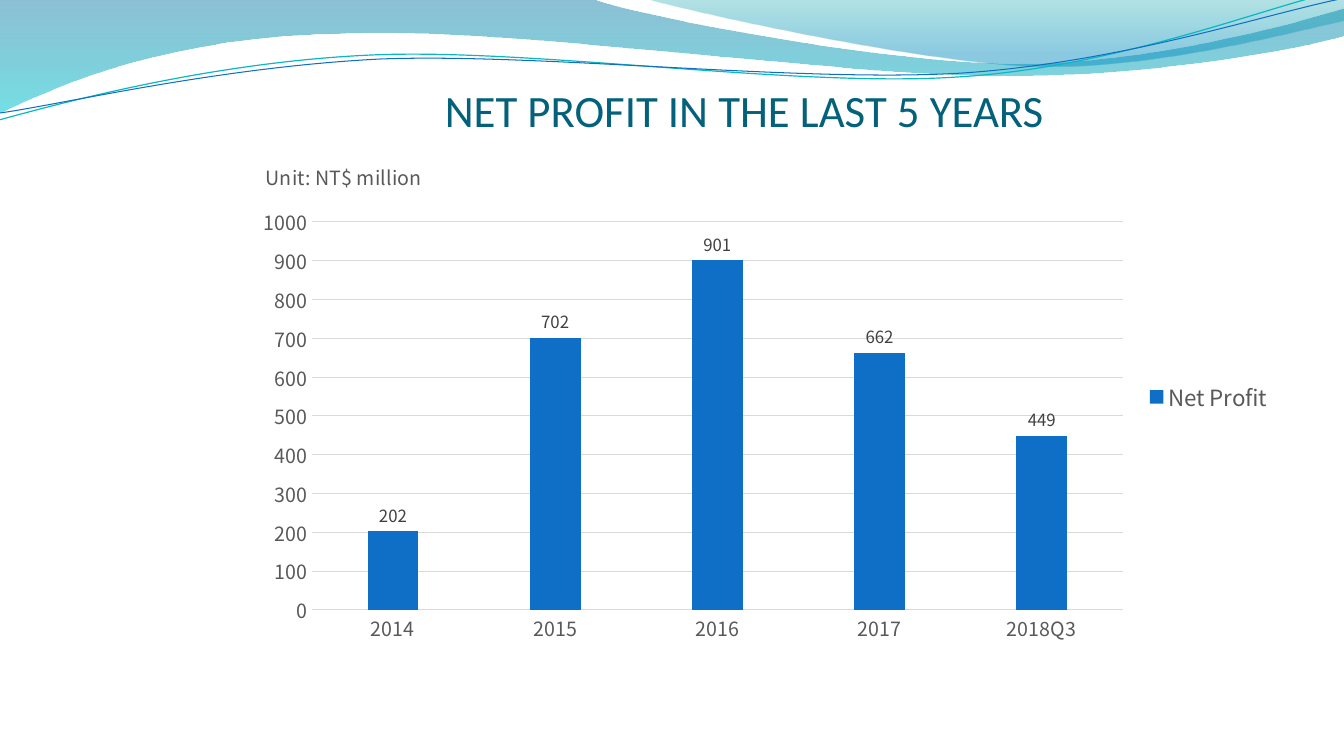
from collections import namedtuple
from dataclasses import dataclass

from lxml import etree
from pptx import Presentation
from pptx.chart.data import CategoryChartData
from pptx.dml.color import RGBColor
from pptx.enum.chart import XL_CHART_TYPE, XL_LABEL_POSITION, XL_LEGEND_POSITION, XL_TICK_MARK
from pptx.enum.text import MSO_ANCHOR, PP_ALIGN
from pptx.oxml import parse_xml
from pptx.oxml.ns import nsdecls, qn
from pptx.util import Pt

COLUMN = XL_CHART_TYPE.COLUMN_CLUSTERED
LABEL_ABOVE = XL_LABEL_POSITION.OUTSIDE_END
LEGEND_RIGHT = XL_LEGEND_POSITION.RIGHT
NO_TICK = XL_TICK_MARK.NONE
BOTTOM = MSO_ANCHOR.BOTTOM
CENTER = PP_ALIGN.CENTER

PX = 914400 / 100.8
TITLE_ONLY = 5

Box = namedtuple("Box", "left top width height")
Stop = namedtuple("Stop", "position color opacity")


@dataclass(frozen=True)
class Theme:
    heading_font: str = "Calibri"
    chart_font: str = "Noto Sans CJK SC"
    heading: str = "04617B"
    muted: str = "595959"
    label: str = "404040"
    grid: str = "D9D9D9"
    blue: str = "0F6FC6"
    teal: str = "0AB8BF"
    heading_size: int = 32
    legend_size: int = 16
    axis_size: int = 14
    label_size: int = 12


THEME = Theme()

# Six numbers are a cubic curve, two are a straight edge.
BANDS = [
    ([(0, 0), (592, -1), (639, 17, 892, 64, 1019, 64), (1147, 64, 1288, 26, 1344, 9),
      (1346, 36), (1321, 44, 1169, 77, 1002, 76), (836, 76, 513, 28, 346, 34),
      (173, 36, 61, 84, -1, 114)],
     [Stop(0, "0074A1", 45), Stop(1, "00C6CF", 55)]),
    ([(644, -1), (684, 11, 916, 62, 1033, 66), (1150, 70, 1292, 32, 1344, 21), (1344, 0)],
     [Stop(0, "00A1A9", 30), Stop(0.8, "008BBF", 45)]),
]
STRANDS = [
    ([(-1, 120), (65, 102, 213, 62, 372, 55), (531, 48, 796, 88, 958, 77),
      (1119, 67, 1262, 8, 1342, -10)], THEME.teal, 0.85),
    ([(0, 113), (64, 104, 220, 67, 381, 59), (541, 53, 802, 83, 963, 73),
      (1125, 62, 1265, 14, 1345, -2)], THEME.blue, 0.75),
]
NET_PROFIT = {"2014": 202, "2015": 702, "2016": 901, "2017": 662, "2018Q3": 449}


def px(length):
    return round(length * PX)


def rgb(color):
    return RGBColor.from_string(color)


def apply(target, values):
    for name, value in values.items():
        setattr(target, name, value)


def set_font(font, face, size, color):
    apply(font, {"name": face, "size": Pt(size), "bold": False})
    font.color.rgb = rgb(color)


def set_line(line, color, width):
    line.color.rgb = rgb(color)
    line.width = Pt(width)


def add_outline(slide, box, segments, closed):
    """Join the segment ends, then bend the edges that are cubic curves."""
    ends = [(px(box.left + segment[-2]), px(box.top + segment[-1])) for segment in segments]
    builder = slide.shapes.build_freeform(*ends[0])
    builder.add_line_segments(ends[1:], close=closed)
    outline = builder.convert_to_shape()
    outline.shadow.inherit = False
    edges = list(outline.element.spPr.iter(qn("a:lnTo")))
    for edge, segment in zip(edges, segments[1:]):
        if len(segment) == 2:
            continue
        curve = etree.Element(qn("a:cubicBezTo"))
        for x, y in zip(segment[::2], segment[1::2]):
            etree.SubElement(curve, qn("a:pt"), x=str(px(box.left + x) - outline.left),
                             y=str(px(box.top + y) - outline.top))
        edge.getparent().replace(edge, curve)
    return outline


def add_waves(slide, box):
    for segments, stops in BANDS:
        band = add_outline(slide, box, segments, True)
        band.line.fill.background()
        band.fill.gradient()
        band.fill.gradient_angle = 270
        for gradient_stop, stop in zip(band.fill.gradient_stops, stops):
            gradient_stop.position = stop.position
            gradient_stop.color.rgb = rgb(stop.color)
        for color, stop in zip(band.element.spPr.iter(qn("a:srgbClr")), stops):
            etree.SubElement(color, qn("a:alpha"), val=str(stop.opacity * 1000))
    for segments, color, width in STRANDS:
        strand = add_outline(slide, box, segments, False)
        strand.fill.background()
        set_line(strand.line, color, width)


def add_heading(slide, box, text):
    heading = slide.shapes.title
    apply(heading, {side: px(length) for side, length in box._asdict().items()})
    frame = heading.text_frame
    apply(frame, {"margin_left": 0, "margin_top": px(5), "margin_right": 0,
                  "margin_bottom": 0, "vertical_anchor": BOTTOM, "word_wrap": True})
    frame.text = text
    paragraph = frame.paragraphs[0]
    paragraph.alignment = CENTER
    set_font(paragraph.runs[0].font, THEME.heading_font, THEME.heading_size, THEME.heading)


def pin(part, index, fractions, inner=False):
    """Give a chart part a manual layout in fractions of the chart."""
    old = part.find(qn("c:layout"))
    if old is not None:
        part.remove(old)
    tags = '<c:layoutTarget val="inner"/>' if inner else ""
    tags += '<c:xMode val="edge"/><c:yMode val="edge"/>'
    tags += "".join(f'<c:{key} val="{value:.4f}"/>' for key, value in zip("xywh", fractions))
    part.insert(index, parse_xml(
        f'<c:layout {nsdecls("c")}><c:manualLayout>{tags}</c:manualLayout></c:layout>'))


def add_profit_chart(slide, box):
    data = CategoryChartData()
    data.categories = list(NET_PROFIT)
    data.add_series("Net Profit", list(NET_PROFIT.values()))
    chart = slide.shapes.add_chart(COLUMN, *map(px, box), data).chart
    set_font(chart.font, THEME.chart_font, THEME.axis_size, THEME.muted)

    chart.has_title = True
    unit = chart.chart_title.text_frame
    unit.text = "Unit: NT$ million"
    set_font(unit.paragraphs[0].runs[0].font, THEME.chart_font, THEME.axis_size, THEME.muted)
    space = chart._chartSpace
    pin(space.find(".//" + qn("c:title")), 1, (19 / box.width, 15 / box.height))
    pin(space.find(".//" + qn("c:plotArea")), 0,
        (69 / box.width, 80 / box.height, 811 / box.width, 388 / box.height), inner=True)

    chart.has_legend = True
    apply(chart.legend, {"position": LEGEND_RIGHT, "include_in_layout": False})
    set_font(chart.legend.font, THEME.chart_font, THEME.legend_size, THEME.muted)

    years, amounts = chart.category_axis, chart.value_axis
    for axis in (years, amounts):
        apply(axis, {"major_tick_mark": NO_TICK, "minor_tick_mark": NO_TICK})
        set_font(axis.tick_labels.font, THEME.chart_font, THEME.axis_size, THEME.muted)
    set_line(years.format.line, THEME.grid, 0.75)
    apply(amounts, {"minimum_scale": 0, "maximum_scale": 1000, "major_unit": 100,
                    "has_major_gridlines": True})
    amounts.format.line.fill.background()
    set_line(amounts.major_gridlines.format.line, THEME.grid, 0.75)

    plot = chart.plots[0]
    apply(plot, {"gap_width": 219, "overlap": -27, "vary_by_categories": False,
                 "has_data_labels": True})
    apply(plot.data_labels, {"show_value": True, "position": LABEL_ABOVE})
    set_font(plot.data_labels.font, THEME.chart_font, THEME.label_size, THEME.label)
    profit = plot.series[0]
    profit.invert_if_negative = False
    profit.format.fill.solid()
    profit.format.fill.fore_color.rgb = rgb(THEME.blue)


def main():
    deck = Presentation()
    apply(deck, {"slide_width": px(1344), "slide_height": px(756)})
    slide = deck.slides.add_slide(deck.slide_layouts[TITLE_ONLY])
    add_waves(slide, Box(0, 0, 1344, 120))
    add_heading(slide, Box(253, 80, 983, 57), "NET PROFIT IN THE LAST 5 YEARS")
    add_profit_chart(slide, Box(243, 142, 1040, 510))
    deck.save("out.pptx")


if __name__ == "__main__":
    main()
